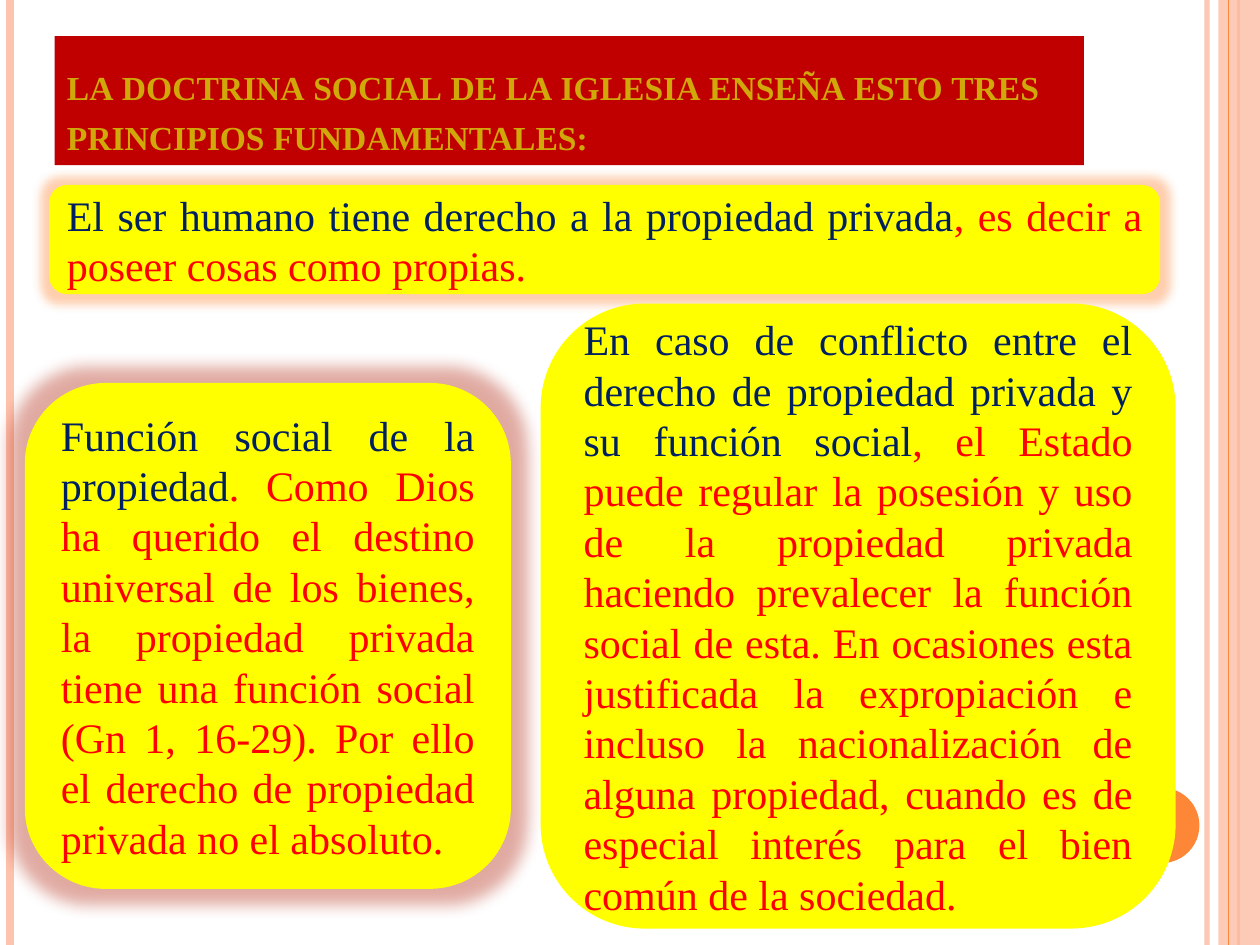
"""Build a slide on three principles of private property."""
from lxml import etree
from pptx import Presentation
from pptx import util as u
from pptx.dml.color import RGBColor
from pptx.enum import shapes, text
from pptx.oxml import ns

PEACH = RGBColor(0xFE, 0xC3, 0xAE)
ORANGE = RGBColor(0xFE, 0x86, 0x37)
BRICK = RGBColor(0xB3, 0x2C, 0x16)
CRIMSON = RGBColor(0xC0, 0x00, 0x00)
GOLD = RGBColor(0xD0, 0xA8, 0x0A)
YELLOW = RGBColor(0xFF, 0xFF, 0x00)
NAVY = RGBColor(0x00, 0x20, 0x60)
RED = RGBColor(0xFF, 0x00, 0x00)
SHAPE = shapes.MSO_SHAPE
HEIGHT = 19.05


def add(parent, tag, **attrs):
    return etree.SubElement(parent, ns.qn(tag), attrs)


def fade(node, share):
    color = next(node.iter(ns.qn("a:srgbClr")))
    add(color, "a:alpha", val=str(share * 1000))


class Painter:
    def __init__(self, slide, font="Times New Roman", size=24):
        self.slide = slide
        self.font = font
        self.size = size

    def stripe(self, x, color, width, alpha=100):
        line = self.slide.shapes.add_connector(
            shapes.MSO_CONNECTOR.STRAIGHT, u.Cm(x), 0, u.Cm(x), u.Cm(HEIGHT))
        line.line.color.rgb = color
        line.line.width = u.Pt(width)
        props = line._element.spPr
        if alpha < 100:
            fade(props, alpha)
        add(props, "a:effectLst")

    def block(self, kind, box, color, alpha=100):
        shape = self.slide.shapes.add_shape(kind, *map(u.Cm, box))
        shape.fill.solid()
        shape.fill.fore_color.rgb = color
        if alpha < 100:
            fade(shape._element.spPr, alpha)
        shape.line.fill.background()
        shape.shadow.inherit = False
        return shape

    def label(self, shape, parts, align, anchor):
        frame = shape.text_frame
        frame.word_wrap = True
        frame.vertical_anchor = anchor
        para = frame.paragraphs[0]
        para.alignment = align
        for words, color in parts:
            run = para.add_run()
            run.text = words
            run.font.name = self.font
            run.font.size = u.Pt(self.size)
            run.font.color.rgb = color
        return para

    def title(self, box, words):
        shape = self.block(SHAPE.RECTANGLE, box, CRIMSON)
        para = self.label(shape, [(words, GOLD)], text.PP_ALIGN.LEFT,
                          text.MSO_ANCHOR.BOTTOM)
        font = para.runs[0].font
        font.bold = True
        font._element.set("cap", "small")

    def card(self, box, lead, rest, glow=None):
        shape = self.block(SHAPE.ROUNDED_RECTANGLE, box, YELLOW)
        self.label(shape, [(lead, NAVY), (rest, RED)],
                   text.PP_ALIGN.JUSTIFY, text.MSO_ANCHOR.MIDDLE)
        if glow:
            color, radius = glow
            effects = shape._element.spPr.find(ns.qn("a:effectLst"))
            halo = add(effects, "a:glow", rad=str(int(u.Pt(radius))))
            add(halo, "a:srgbClr", val=str(color))
            fade(halo, 40)


def main():
    deck = Presentation()
    deck.slide_width, deck.slide_height = u.Cm(25.4), u.Cm(HEIGHT)
    pen = Painter(deck.slides.add_slide(deck.slide_layouts[6]))

    pen.stripe(24.33, PEACH, 3, 93)
    pen.stripe(0.2, PEACH, 4.5)
    pen.stripe(24.97, ORANGE, 1.5)
    pen.block(SHAPE.RECTANGLE, (24.56, 0, 0.84, HEIGHT), PEACH, 87)
    pen.stripe(24.77, ORANGE, 0.75)
    pen.block(SHAPE.OVAL, (22.66, 15.88, 1.52, 1.52), ORANGE)

    pen.title((1.1, 0.73, 20.75, 2.6),
              "la doctrina social de la iglesia enseña esto tres "
              "principios fundamentales:")
    pen.card((0.99, 3.73, 22.4, 2.2),
             "El ser humano tiene derecho a la propiedad privada",
             ", es decir a poseer cosas como propias.", (ORANGE, 11))
    pen.card((0.5, 7.72, 9.8, 10.2),
             "Función social de la propiedad",
             ". Como Dios ha querido el destino universal de los bienes, "
             "la propiedad privada tiene una función social (Gn 1, 16-29). "
             "Por ello el derecho de propiedad privada no el absoluto.",
             (BRICK, 18))
    pen.card((10.9, 6.12, 12.8, 12.6),
             "En caso de conflicto entre el derecho de propiedad privada "
             "y su función social",
             ", el Estado puede regular la posesión y uso de la propiedad "
             "privada haciendo prevalecer la función social de esta. En "
             "ocasiones esta justificada la expropiación e incluso la "
             "nacionalización de alguna propiedad, cuando es de especial "
             "interés para el bien común de la sociedad.")
    deck.save("out.pptx")


if __name__ == "__main__":
    main()
